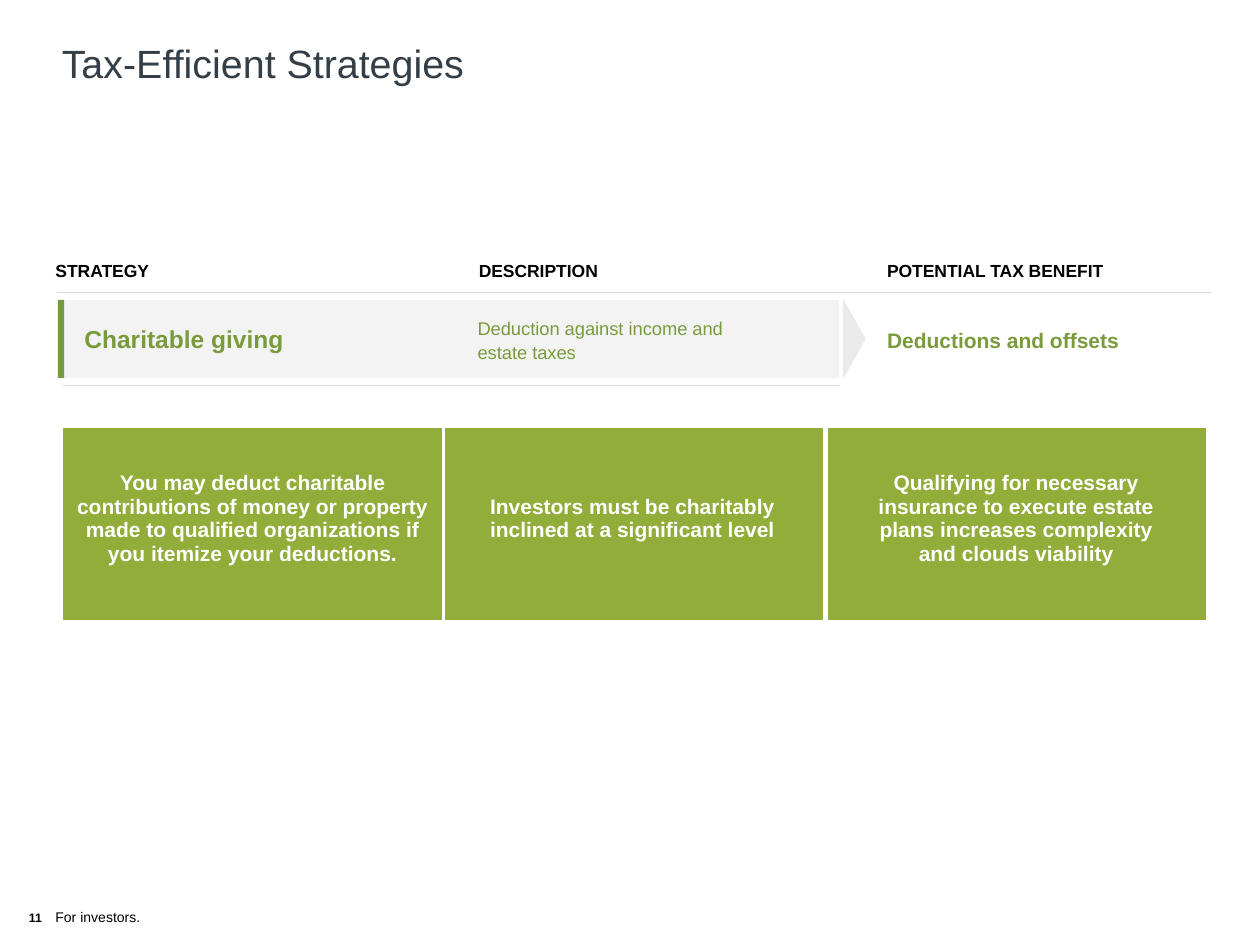
from dataclasses import dataclass

from lxml.etree import SubElement
from pptx import Presentation
from pptx.dml.color import RGBColor
from pptx.enum.shapes import MSO_CONNECTOR, MSO_SHAPE
from pptx.enum.text import MSO_ANCHOR, PP_ALIGN
from pptx.oxml.ns import qn
from pptx.util import Inches, Pt


@dataclass(frozen=True)
class Theme:
    font: str = "Arial"
    ink: str = "333E47"
    black: str = "000000"
    white: str = "FFFFFF"
    green: str = "799B3C"
    tile: str = "93AD3B"
    band: str = "F1F1F1"
    arrow: str = "EAEAEA"
    rule: str = "D9D9D9"
    title: float = 22.5
    name: float = 14
    body: float = 12
    desc: float = 10.5
    head: float = 10
    note: float = 8
    page: float = 7


THEME = Theme()
COLS = (0.44, 3.8, 7.04)


def write(para, text, size=THEME.body, color=THEME.black, bold=False):
    run = para.add_run()
    run.text = text
    font = run.font
    font.name, font.size, font.bold = THEME.font, Pt(size), bold
    font.color.rgb = RGBColor.from_string(color)


def add_text(slide, box, text="", space=1.0, **style):
    """Place a text box and return its paragraph."""
    frame = slide.shapes.add_textbox(*map(Inches, box)).text_frame
    frame.word_wrap = True
    frame.margin_left = frame.margin_right = frame.margin_bottom = 0
    frame.margin_top = Inches(0.02)
    para = frame.paragraphs[0]
    para.line_spacing = space
    if text:
        write(para, text, **style)
    return para


def paint(shape, color, alpha=None):
    shape.shadow.inherit = False
    shape.fill.solid()
    shape.fill.fore_color.rgb = RGBColor.from_string(color)
    shape.line.fill.background()
    if alpha:
        tint = shape.fill._xPr.find(".//" + qn("a:srgbClr"))
        SubElement(tint, qn("a:alpha")).set("val", str(alpha * 1000))


def add_rect(slide, box, color, alpha=None):
    rect = slide.shapes.add_shape(MSO_SHAPE.RECTANGLE, *map(Inches, box))
    paint(rect, color, alpha)


def add_rule(slide, left, top, width):
    ends = map(Inches, (left, top, left + width, top))
    rule = slide.shapes.add_connector(MSO_CONNECTOR.STRAIGHT, *ends)
    rule.line.color.rgb = RGBColor.from_string(THEME.rule)
    rule.line.width = Pt(0.75)
    SubElement(rule._element.spPr, qn("a:effectLst"))


def add_heads(slide, left, top, width):
    heads = ("STRATEGY", "DESCRIPTION", "POTENTIAL TAX BENEFIT")
    for x, head in zip(COLS, heads):
        add_text(slide, (x, top, 2, 0.19), head, size=THEME.head, bold=True)
    add_rule(slide, left, top + 0.28, width)


def add_band(slide, left, top, width, height):
    """Draw the strategy row: band, accent, arrow, rule and three texts."""
    add_rect(slide, (left, top, width, height), THEME.band, 85)
    add_rect(slide, (left, top, 0.05, height), THEME.green)

    tip = left + width + 0.03
    mid = top + height / 2
    pen = slide.shapes.build_freeform(Inches(tip), Inches(top - 0.01), scale=1.0)
    pen.add_line_segments([
        (Inches(tip), Inches(top + height + 0.01)),
        (Inches(tip + 0.18), Inches(mid)),
    ])
    paint(pen.convert_to_shape(), THEME.arrow)
    add_rule(slide, left + 0.04, top + height + 0.06, width - 0.03)

    add_text(slide, (0.67, top + 0.17, 2, 0.26), "Charitable giving",
             size=THEME.name, color=THEME.green, bold=True)
    add_text(slide, (COLS[1] - 0.01, top + 0.1, 2.05, 0.38),
             "Deduction against income and estate taxes", space=1.09,
             size=THEME.desc, color=THEME.green)
    add_text(slide, (COLS[2], top + 0.2, 2.3, 0.23), "Deductions and offsets",
             color=THEME.green, bold=True)


def add_edge(cell, side, width):
    edge = SubElement(cell._tc.get_or_add_tcPr(), qn(f"a:{side}"))
    edge.set("w", str(Pt(width)))
    fill = SubElement(edge, qn("a:solidFill"))
    SubElement(fill, qn("a:srgbClr")).set("val", THEME.white)


def add_tiles(slide, left, top, width, height):
    tiles = (
        ("You may deduct charitable contributions of money or property made to "
         "qualified organizations if you itemize your deductions.",
         0.11, PP_ALIGN.CENTER, {"lnR": 2.25}),
        ("Investors must be charitably inclined at a significant level",
         0.37, PP_ALIGN.LEFT, {"lnL": 2.25, "lnR": 3}),
        ("Qualifying for necessary insurance to execute estate plans increases "
         "complexity and clouds viability",
         0.41, PP_ALIGN.CENTER, {"lnL": 3}),
    )
    box = map(Inches, (left, top, width, height))
    table = slide.shapes.add_table(1, len(tiles), *box).table
    table.first_row = table.horz_banding = False
    for cell, (text, pad, align, edges) in zip(table.iter_cells(), tiles):
        for side, weight in edges.items():
            add_edge(cell, side, weight)
        cell.fill.solid()
        cell.fill.fore_color.rgb = RGBColor.from_string(THEME.tile)
        cell.vertical_anchor = MSO_ANCHOR.MIDDLE
        cell.margin_left = cell.margin_right = Inches(pad)
        cell.margin_top, cell.margin_bottom = 0, Inches(0.09)
        para = cell.text_frame.paragraphs[0]
        para.alignment = align
        write(para, text, color=THEME.white, bold=True)


def add_foot(slide, left, top, width, height):
    para = add_text(slide, (left, top, width, height))
    tabs = SubElement(para._p.get_or_add_pPr(), qn("a:tabLst"))
    stop = SubElement(tabs, qn("a:tab"))
    stop.set("pos", str(Inches(0.21)))
    stop.set("algn", "l")
    write(para, "11\t", size=THEME.page, bold=True)
    write(para, "For investors.", size=THEME.note)


def main():
    deck = Presentation()
    deck.slide_width, deck.slide_height = Inches(10), Inches(7.5)
    slide = deck.slides.add_slide(deck.slide_layouts[6])
    add_text(slide, (0.49, 0.29, 8.88, 0.7), "Tax-Efficient Strategies",
             size=THEME.title, color=THEME.ink)
    add_heads(slide, 0.45, 2.04, 9.17)
    add_band(slide, 0.46, 2.38, 6.2, 0.62)
    add_tiles(slide, 0.49, 3.39, 9.09, 1.54)
    add_foot(slide, 0.23, 7.19, 5, 0.16)
    deck.save("out.pptx")


if __name__ == "__main__":
    main()
